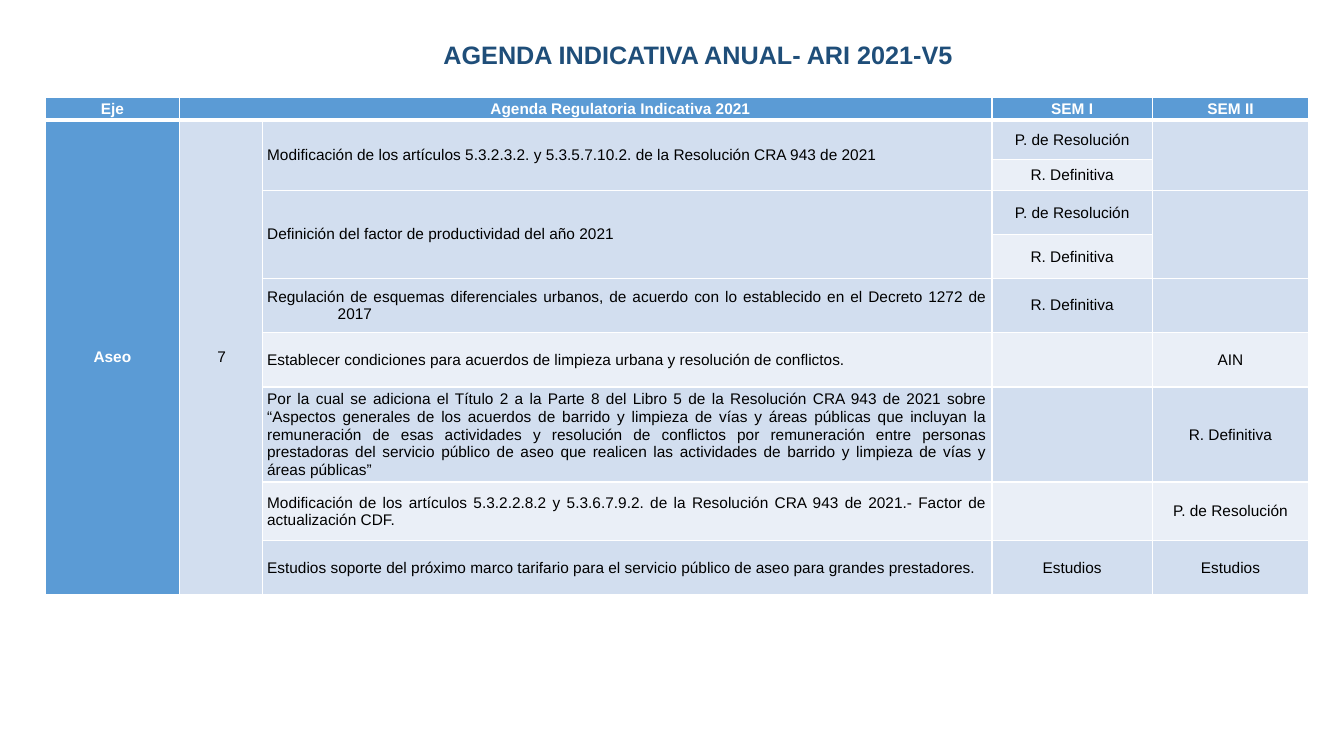
from dataclasses import dataclass

from lxml.etree import SubElement as Sub
from pptx import Presentation as Deck
from pptx.dml.color import RGBColor as Color
from pptx.enum.text import MSO_ANCHOR as Anchor
from pptx.enum.text import MSO_AUTO_SIZE as Fit
from pptx.enum.text import PP_ALIGN as Align
from pptx.oxml.ns import qn
from pptx.slide import Slide
from pptx.table import Table
from pptx.table import _Cell as Box
from pptx.util import Inches, Pt

NAVY = Color(0x1F, 0x4E, 0x79)
BLUE = Color(0x5B, 0x9B, 0xD5)
LIGHT = Color(0xD2, 0xDE, 0xEF)
PALE = Color(0xEA, 0xEF, 0xF7)
WHITE = Color(0xFF, 0xFF, 0xFF)
BLACK = Color(0x00, 0x00, 0x00)

FONT = "Arial"
SIZE = 11
WIDTHS = (1.33, 0.82, 7.24, 1.59, 1.55)
HEIGHTS = (0.22, 0.39, 0.31, 0.44, 0.43, 0.54, 0.54, 0.92, 0.58, 0.54)


@dataclass(frozen=True)
class Entry:
    row: int
    col: int
    text: str = ""
    down: int = 1
    wide: int = 1
    align: Align = Align.CENTER
    left: float = 0.7
    first: float = -0.7
    inset: float = 0.05
    lead: float | None = 1.03


def topic(row: int, text: str, down: int = 1, align: Align = Align.JUSTIFY,
          hang: float = 0.7) -> Entry:
    return Entry(row, 2, text, down, align=align, left=hang, first=-hang)


ENTRIES = (
    Entry(0, 0, "Eje", inset=0.01),
    Entry(0, 1, "Agenda Regulatoria Indicativa 2021", wide=2, first=-0.01, inset=0.01),
    Entry(0, 3, "SEM I", inset=0.01),
    Entry(0, 4, "SEM II", inset=0.01),
    Entry(1, 0, "Aseo", down=9, left=0, first=0, inset=0.01),
    Entry(1, 1, "7", down=9, first=-0.68, inset=0.01),
    topic(1, "Modificación de los artículos 5.3.2.3.2. y 5.3.5.7.10.2. de la "
             "Resolución CRA 943 de 2021", 2, Align.LEFT),
    Entry(1, 3, "P. de Resolución"),
    Entry(1, 4, down=2),
    Entry(2, 3, "R. Definitiva"),
    topic(3, "Definición del factor de productividad del año 2021", 2),
    Entry(3, 3, "P. de Resolución"),
    Entry(3, 4, down=2),
    Entry(4, 3, "R. Definitiva"),
    topic(5, "Regulación de esquemas diferenciales urbanos, de acuerdo con lo "
             "establecido en el Decreto 1272 de 2017"),
    Entry(5, 3, "R. Definitiva"),
    topic(6, "Establecer condiciones para acuerdos de limpieza urbana y "
             "resolución de conflictos."),
    Entry(6, 4, "AIN"),
    topic(7, "Por la cual se adiciona el Título 2 a la Parte 8 del Libro 5 de la "
             "Resolución CRA 943 de 2021 sobre “Aspectos generales de los acuerdos "
             "de barrido y limpieza de vías y áreas públicas que incluyan la "
             "remuneración de esas actividades y resolución de conflictos por "
             "remuneración entre personas prestadoras del servicio público de aseo "
             "que realicen las actividades de barrido y limpieza de vías y áreas "
             "públicas”", hang=0),
    Entry(7, 4, "R. Definitiva"),
    topic(8, "Modificación de los artículos 5.3.2.2.8.2 y 5.3.6.7.9.2. de la "
             "Resolución CRA 943 de 2021.- Factor de actualización CDF.", hang=0),
    Entry(8, 4, "P. de Resolución"),
    topic(9, "Estudios soporte del próximo marco tarifario para el servicio "
             "público de aseo para grandes prestadores.", hang=0),
    Entry(9, 3, "Estudios", left=0, first=0, inset=0.01, lead=None),
    Entry(9, 4, "Estudios", inset=0.01),
)


def style(item: object, form: dict[str, object]) -> None:
    for name, value in form.items():
        setattr(item, name, value)


def add_title(slide: Slide) -> None:
    box = slide.shapes.add_textbox(Inches(4.3), Inches(0.34), Inches(8.39), Inches(0.4))
    frame = box.text_frame
    style(frame, {"word_wrap": True, "auto_size": Fit.SHAPE_TO_FIT_TEXT})
    run = frame.paragraphs[0].add_run()
    run.text = "AGENDA INDICATIVA ANUAL- ARI 2021-V5"
    style(run.font, {"name": FONT, "size": Pt(18), "bold": True})
    run.font.color.rgb = NAVY


def add_edges(cell: Box, row: int) -> None:
    props = cell._tc.get_or_add_tcPr()
    thick = {"T": 3 if row == 1 else 1, "B": 3 if row == 0 else 1}
    for side in "LRTB":
        line = Sub(props, qn(f"a:ln{side}"), w=str(Pt(thick.get(side, 1))))
        Sub(Sub(line, qn("a:solidFill")), qn("a:srgbClr"), val=str(WHITE))


def dress(cell: Box, row: int, col: int) -> None:
    add_edges(cell, row)
    cell.fill.solid()
    band = LIGHT if row % 2 else PALE
    cell.fill.fore_color.rgb = BLUE if row == 0 or col == 0 else band
    style(cell, {"margin_top": 0, "margin_bottom": 0,
                 "vertical_anchor": Anchor.MIDDLE})


def write(table: Table, entry: Entry) -> None:
    cell = table.cell(entry.row, entry.col)
    if entry.down * entry.wide > 1:
        cell.merge(table.cell(entry.row + entry.down - 1, entry.col + entry.wide - 1))
    if not entry.text:
        return
    style(cell, {"margin_left": Inches(entry.inset), "margin_right": Inches(entry.inset)})
    para = cell.text_frame.paragraphs[0]
    style(para, {"alignment": entry.align, "line_spacing": entry.lead,
                 "space_after": Pt(0.2)})
    props = para._p.get_or_add_pPr()
    props.set("marL", str(Inches(entry.left)))
    props.set("indent", str(Inches(entry.first)))
    run = para.add_run()
    run.text = entry.text
    head = entry.row == 0 or entry.col == 0
    style(run.font, {"name": FONT, "size": Pt(SIZE), "bold": head})
    run.font.color.rgb = WHITE if head else BLACK


def add_grid(slide: Slide) -> None:
    frame = slide.shapes.add_table(len(HEIGHTS), len(WIDTHS), Inches(0.45), Inches(0.97),
                                   Inches(sum(WIDTHS)), Inches(sum(HEIGHTS)))
    table = frame.table
    table.horz_banding = False
    for col, width in enumerate(WIDTHS):
        table.columns[col].width = Inches(width)
    for row, height in enumerate(HEIGHTS):
        table.rows[row].height = Inches(height)
        for col in range(len(WIDTHS)):
            dress(table.cell(row, col), row, col)
    for entry in ENTRIES:
        write(table, entry)
    for cell in table.iter_cells():
        para = cell.text_frame.paragraphs[0]
        Sub(para._p, qn("a:endParaRPr"), sz=str(SIZE * 100))


def main() -> None:
    deck = Deck()
    style(deck, {"slide_width": Inches(13.33), "slide_height": Inches(7.5)})
    slide = deck.slides.add_slide(deck.slide_layouts[6])
    add_title(slide)
    add_grid(slide)
    deck.save("out.pptx")


if __name__ == "__main__":
    main()
